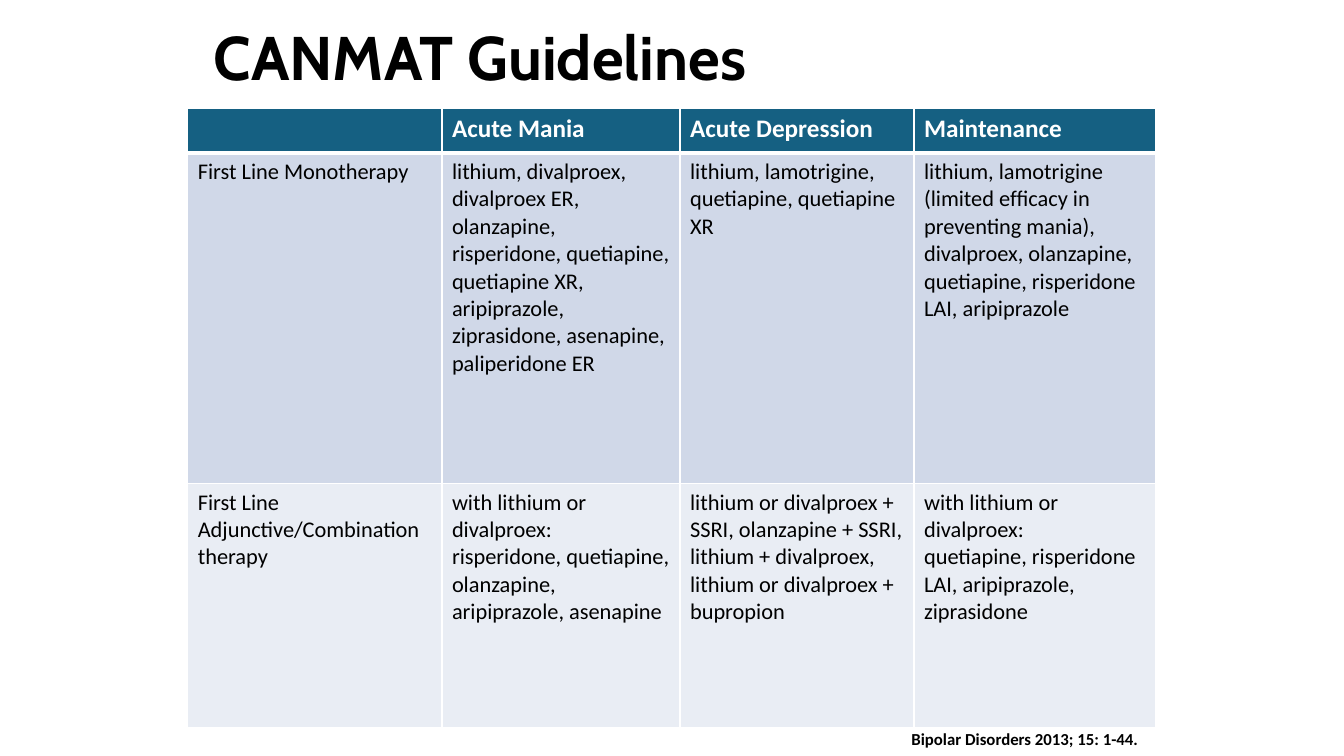
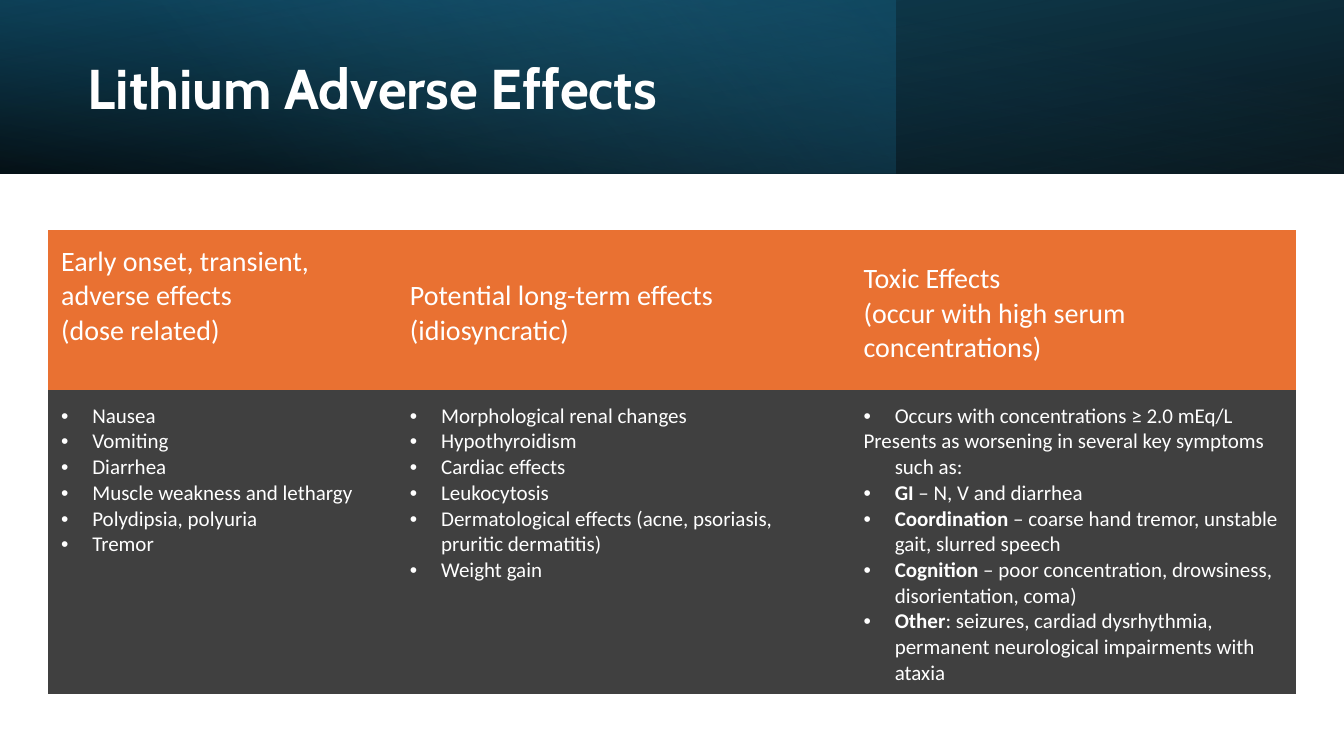
from lxml.etree import SubElement
from pptx import Presentation
from pptx.dml.color import RGBColor
from pptx.enum.shapes import MSO_SHAPE
from pptx.enum.text import MSO_ANCHOR, MSO_AUTO_SIZE, PP_ALIGN
from pptx.oxml import parse_xml
from pptx.oxml.ns import nsdecls, qn
from pptx.util import Inches, Pt

WIDE, HIGH = Inches(13.33), Inches(7.5)
HEAD, BODY = "Cabin", "Calibri"
BLACK = RGBColor(0x00, 0x00, 0x00)
WHITE = RGBColor(0xFF, 0xFF, 0xFF)
TEAL = RGBColor(0x15, 0x60, 0x82)
DEEP = RGBColor(0x10, 0x48, 0x62)
SKY = RGBColor(0x46, 0xB1, 0xE1)
BLUE = RGBColor(0xD0, 0xD8, 0xE8)
PALE = RGBColor(0xE9, 0xED, 0xF4)
ORANGE = RGBColor(0xE9, 0x71, 0x32)
GREY = RGBColor(0x40, 0x40, 0x40)
NO_STYLE = "{2D5ABB26-0587-4C30-8999-92F81FD0307C}"

DRUGS = [
    ["", "Acute Mania", "Acute Depression", "Maintenance"],
    ["First Line Monotherapy",
     "lithium, divalproex, divalproex ER, olanzapine, risperidone, quetiapine, "
     "quetiapine XR, aripiprazole, ziprasidone, asenapine, paliperidone ER",
     "lithium, lamotrigine, quetiapine, quetiapine XR",
     "lithium, lamotrigine (limited efﬁcacy in preventing mania), divalproex, "
     "olanzapine, quetiapine, risperidone LAI, aripiprazole"],
    ["First Line\nAdjunctive/Combination therapy",
     "with lithium or divalproex:\nrisperidone, quetiapine, olanzapine, "
     "aripiprazole, asenapine",
     "lithium or divalproex + SSRI, olanzapine + SSRI, lithium + divalproex, "
     "lithium or divalproex + bupropion",
     "with lithium or divalproex:\nquetiapine, risperidone LAI, aripiprazole, "
     "ziprasidone"],
]

# A pair holds a bold lead and the words after it.
EFFECTS = [
    ("Early onset, transient, adverse effects\n(dose related)",
     ["Nausea", "Vomiting", "Diarrhea", "Muscle weakness and lethargy",
      "Polydipsia, polyuria", "Tremor"]),
    ("Potential long-term effects\n(idiosyncratic)",
     ["Morphological renal changes", "Hypothyroidism", "Cardiac effects",
      "Leukocytosis",
      "Dermatological effects (acne, psoriasis, pruritic dermatitis)",
      "Weight gain"]),
    ("Toxic Effects\n(occur with high serum concentrations)",
     ["Occurs with concentrations ≥ 2.0 mEq/L",
      "Presents as worsening in several key symptoms such as:",
      ("GI", " – N, V and diarrhea"),
      ("Coordination", " – coarse hand tremor, unstable gait, slurred speech"),
      ("Cognition", " – poor concentration, drowsiness, disorientation, coma)"),
      ("Other", ": seizures, cardiad dysrhythmia, permanent neurological "
                "impairments with ataxia")]),
]


def area(x, y, w, h):
    """Turn percentages of the slide into a left, top, width, height box."""
    return [int(WIDE * x / 100), int(HIGH * y / 100),
            int(WIDE * w / 100), int(HIGH * h / 100)]


def style(frame, size, color, bold=None, face=BODY):
    for para in frame.paragraphs:
        font = para.font
        font.name, font.size, font.bold = face, Pt(size), bold
        font.color.rgb = color


def add_title(slide, box, text, size, color):
    title = slide.shapes.title
    title.left, title.top, title.width, title.height = box
    frame = title.text_frame
    frame.text = text
    frame.auto_size = MSO_AUTO_SIZE.NONE
    frame.vertical_anchor = MSO_ANCHOR.MIDDLE
    para = frame.paragraphs[0]
    para.alignment, para.line_spacing = PP_ALIGN.LEFT, 0.9
    style(frame, size, color, True, HEAD)


def add_grid(slide, box, cols, rows):
    """Add an unstyled table whose columns and rows share the box by weight."""
    table = slide.shapes.add_table(len(rows), len(cols), *box).table
    table.first_row = table.horz_banding = False
    table._tbl.tblPr.find(qn("a:tableStyleId")).text = NO_STYLE
    for col, part in zip(table.columns, cols):
        col.width = int(box[2] * part / sum(cols))
    for row, part in zip(table.rows, rows):
        row.height = int(box[3] * part / sum(rows))
    return table


def paint(cell, color):
    cell.fill.solid()
    cell.fill.fore_color.rgb = color


def edge(cell, top, bottom):
    """Draw white borders, 1 point at the sides."""
    for side, width in zip("LRTB", (1, 1, top, bottom)):
        line = SubElement(cell._tc.get_or_add_tcPr(), qn(f"a:ln{side}"),
                          w=str(Pt(width)))
        fill = SubElement(line, qn("a:solidFill"))
        SubElement(fill, qn("a:srgbClr"), val=str(WHITE))


def drug_table(slide, box):
    table = add_grid(slide, box, (2.52, 2.36, 2.32, 2.4), (0.44, 3.28, 2.42))
    looks = [(TEAL, 18, WHITE, True, 1, 3),
             (BLUE, 16, BLACK, False, 3, 1),
             (PALE, 16, BLACK, False, 1, 1)]
    for r, (texts, look) in enumerate(zip(DRUGS, looks)):
        fill, size, color, bold, top, bottom = look
        for c, text in enumerate(texts):
            cell = table.cell(r, c)
            cell.text = text
            style(cell.text_frame, size, color, bold)
            edge(cell, top, bottom)
            paint(cell, fill)


def add_list(frame, items):
    for i, item in enumerate(items):
        para = frame.add_paragraph() if i else frame.paragraphs[0]
        lead, rest = item if isinstance(item, tuple) else ("", item)
        if lead:
            run = para.add_run()
            run.text, run.font.bold = lead, True
        para.add_run().text = rest
        props = para._p.get_or_add_pPr()
        props.set("marL", str(Inches(0.31)))
        props.set("indent", str(-Inches(0.31)))
        if not rest.endswith(":"):
            SubElement(props, qn("a:buFont"), typeface="Arial")
            SubElement(props, qn("a:buChar"), char="•")


def effect_table(slide, box):
    table = add_grid(slide, box, (3.46, 4.5, 4.42), (1.59, 3.02))
    for c, (head, items) in enumerate(EFFECTS):
        top, body = table.cell(0, c), table.cell(1, c)
        top.text = head
        top.vertical_anchor = MSO_ANCHOR.MIDDLE
        add_list(body.text_frame, items)
        for cell, size, fill in ((top, 20, ORANGE), (body, 15, GREY)):
            cell.margin_left = cell.margin_right = Inches(0.13)
            cell.margin_top, cell.margin_bottom = Inches(0.13), Inches(0.06)
            style(cell.text_frame, size, WHITE)
            paint(cell, fill)
    table.cell(0, 0).margin_bottom = Inches(0.4)


def add_band(slide, box, stops, angle, turn=0, flip=False):
    """Add a gradient band; each stop is position, colour, opacity."""
    band = slide.shapes.add_shape(MSO_SHAPE.RECTANGLE, *box)
    band.shadow.inherit = False
    band.line.fill.background()
    band.rotation = turn
    props = band._element.spPr
    if flip:
        props.find(qn("a:xfrm")).set("flipH", "1")
    marks = "".join(
        f'<a:gs pos="{pos * 1000}"><a:srgbClr val="{color}">'
        f'<a:alpha val="{alpha * 1000}"/></a:srgbClr></a:gs>'
        for pos, color, alpha in stops)
    props.find(qn("a:prstGeom")).addnext(parse_xml(
        f'<a:gradFill {nsdecls("a")} rotWithShape="1"><a:gsLst>{marks}</a:gsLst>'
        f'<a:lin ang="{angle * 60000}" scaled="0"/></a:gradFill>'))


def add_banner(slide, box):
    left, top, width, height = box
    add_band(slide, box, [(0, BLACK, 96), (100, DEEP, 100)], 100, 180, True)
    add_band(slide, (left, top, int(width * 2 / 3), height),
             [(0, TEAL, 41), (74, SKY, 0)], 140)
    add_band(slide, box, [(0, BLACK, 63), (78, TEAL, 15)], 260, flip=True)
    slide.shapes._spTree.append(slide.shapes.title._element)


def add_source(slide, box, text):
    frame = slide.shapes.add_textbox(*box).text_frame
    frame.word_wrap = True
    frame.margin_left = frame.margin_right = Inches(0.09)
    frame.margin_top = frame.margin_bottom = Inches(0.04)
    frame.text = text
    style(frame, 12, BLACK, True)


def guide_slide(slide):
    add_title(slide, area(15.15, -0.27, 67.5, 16.67), "CANMAT Guidelines",
              44, BLACK)
    drug_table(slide, area(13.97, 14.4, 72.05, 81.87))
    add_source(slide, area(67.14, 95.87, 30, 4.13),
               "Bipolar Disorders 2013; 15: 1-44.")


def effect_slide(slide):
    add_banner(slide, area(0, 0, 100, 23))
    add_title(slide, area(5.78, 3.6, 57.91, 16.93), "Lithium Adverse Effects",
              40, WHITE)
    effect_table(slide, area(3.57, 30.4, 92.86, 61.47))


def main():
    deck = Presentation()
    deck.slide_width, deck.slide_height = WIDE, HIGH
    for build in (guide_slide, effect_slide):
        build(deck.slides.add_slide(deck.slide_layouts[5]))
    deck.save("out.pptx")


if __name__ == "__main__":
    main()
